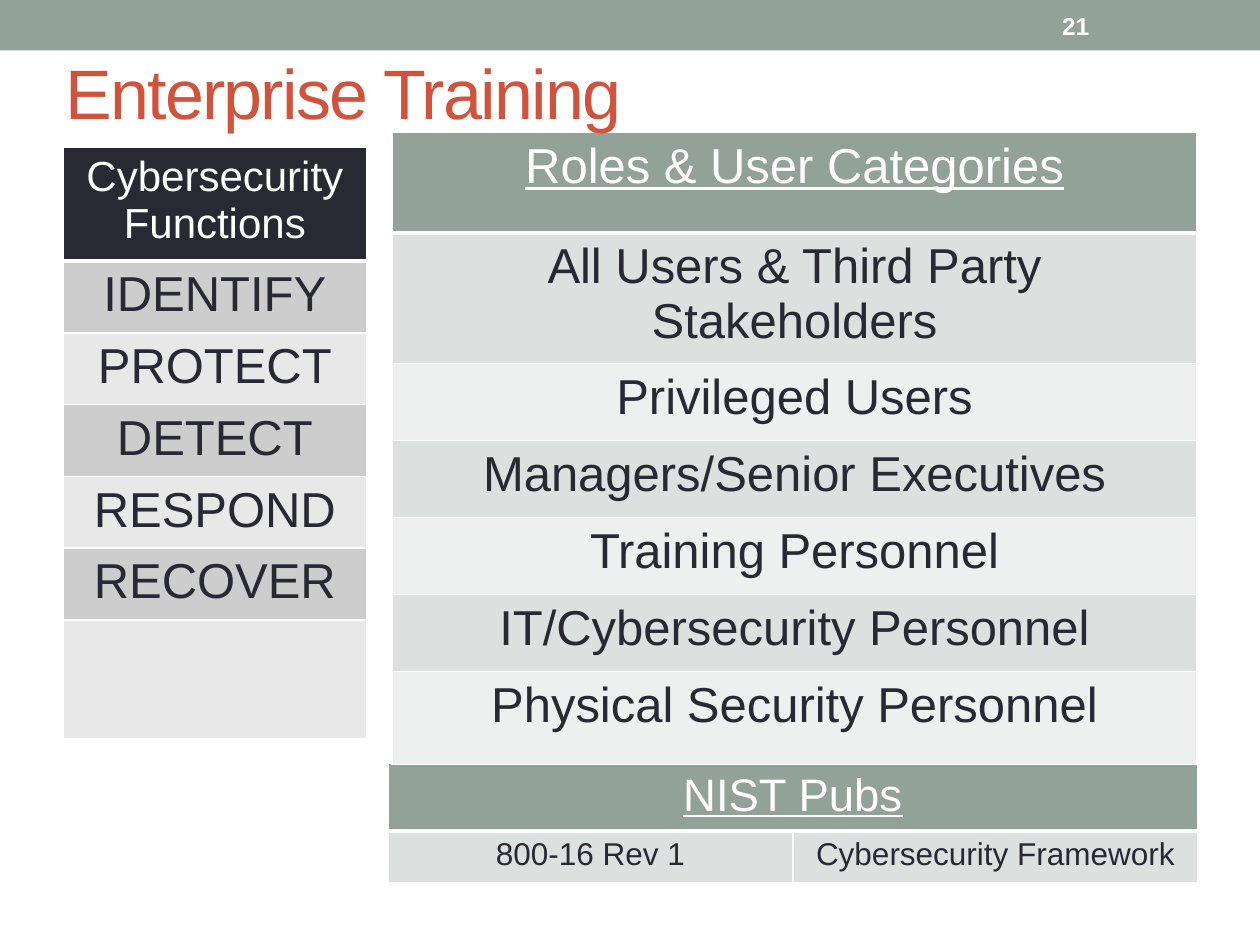
from dataclasses import dataclass

from lxml.etree import SubElement
from pptx import Presentation
from pptx.dml.color import RGBColor
from pptx.enum.shapes import MSO_SHAPE as Shape
from pptx.enum.text import MSO_ANCHOR as Anchor, PP_ALIGN as Align
from pptx.oxml.ns import qn
from pptx.util import Cm, Pt


@dataclass(frozen=True)
class Theme:
    font: str = "Arial"
    sage: str = "93A299"
    sage_bands: tuple = ("DCE0DE", "EEF0EF")
    ink: str = "292934"
    ink_bands: tuple = ("CDCDCE", "E8E8E8")
    accent: str = "D2533C"
    white: str = "FFFFFF"
    title: int = 40
    body: int = 28
    nist_header: int = 26
    functions_header: int = 24
    small: int = 18
    page: int = 14


THEME = Theme()


def write(frame, text, size, color, align=Align.LEFT, **extra):
    paragraph = frame.paragraphs[0]
    paragraph.alignment = align
    run = paragraph.add_run()
    run.text = text
    formats = {"name": THEME.font, "size": Pt(size), **extra}
    for key, value in formats.items():
        setattr(run.font, key, value)
    run.font.color.rgb = RGBColor.from_string(color)
    return run


def add_text(slide, box, text, size, color, **extra):
    frame = slide.shapes.add_textbox(*map(Cm, box)).text_frame
    frame.word_wrap = True
    frame.vertical_anchor = Anchor.MIDDLE
    return write(frame, text, size, color, **extra)


def set_borders(cell, bottom):
    """White rules on every side; they must precede the cell's fill in XML."""
    properties = cell._tc.get_or_add_tcPr()
    for side, width in (("L", 1), ("R", 1), ("T", 1), ("B", bottom)):
        line = SubElement(properties, qn(f"a:ln{side}"), w=str(Pt(width)))
        fill = SubElement(line, qn("a:solidFill"))
        SubElement(fill, qn("a:srgbClr"), val=THEME.white)


def banded_table(slide, box, heights, rows, header_fill, bands,
                 header_size, body_size, underline):
    """Header row over alternating bands; box is left, top, width."""
    left, top, width = box
    columns = max(map(len, rows))
    table = slide.shapes.add_table(
        len(rows), columns, Cm(left), Cm(top), Cm(width), Cm(sum(heights))
    ).table
    for column in table.columns:
        column.width = Cm(width / columns)
    for r, (height, texts) in enumerate(zip(heights, rows)):
        header = r == 0
        table.rows[r].height = Cm(height)
        for c in range(columns):
            cell = table.cell(r, c)
            margins = {"margin_left": 0.18, "margin_right": 0.18,
                       "margin_top": 0.13, "margin_bottom": 0.13}
            for key, value in margins.items():
                setattr(cell, key, Cm(value))
            set_borders(cell, 3 if header else 1)
            cell.fill.solid()
            fill = header_fill if header else bands[(r - 1) % 2]
            cell.fill.fore_color.rgb = RGBColor.from_string(fill)
            if c < len(texts) and texts[c]:
                write(cell.text_frame, texts[c],
                      header_size if header else body_size,
                      THEME.white if header else THEME.ink,
                      Align.CENTER, underline=header and underline)
    if len(rows[0]) < columns:
        table.cell(0, 0).merge(table.cell(0, columns - 1))


def top_bar(slide, box):
    left, top, width, height = box
    bar = slide.shapes.add_shape(Shape.RECTANGLE, *map(Cm, box))
    bar.shadow.inherit = False
    bar.fill.solid()
    bar.fill.fore_color.rgb = RGBColor.from_string(THEME.sage)
    bar.line.fill.background()
    add_text(slide, (left + 21.16, top + 0.05, 2.97, height - 0.1),
             "21", THEME.page, THEME.white, bold=True)


def title(slide, box):
    run = add_text(slide, box, "Enterprise Training", THEME.title, THEME.accent)
    run.font._element.set("spc", "-100")


def nist_pubs(slide, box):
    banded_table(slide, box, [1.25, 1.04],
                 [["NIST Pubs"], ["800-16 Rev 1", "Cybersecurity Framework"]],
                 THEME.sage, THEME.sage_bands,
                 THEME.nist_header, THEME.small, underline=True)


def roles(slide, box):
    names = ["Roles & User Categories", "All Users & Third Party Stakeholders",
             "Privileged Users", "Managers/Senior Executives",
             "Training Personnel", "IT/Cybersecurity Personnel",
             "Physical Security Personnel"]
    banded_table(slide, box, [2.03, 2.46] + [1.55] * 4 + [1.88],
                 [[name] for name in names], THEME.sage, THEME.sage_bands,
                 THEME.body, THEME.body, underline=True)


def functions(slide, box):
    names = ["Cybersecurity Functions", "IDENTIFY", "PROTECT", "DETECT",
             "RESPOND", "RECOVER", ""]
    banded_table(slide, box, [2.11] + [1.35] * 5 + [2.39],
                 [[name] for name in names], THEME.ink, THEME.ink_bands,
                 THEME.functions_header, THEME.body, underline=False)


def main():
    deck = Presentation()
    deck.slide_width, deck.slide_height = Cm(25.4), Cm(19.05)
    slide = deck.slides.add_slide(deck.slide_layouts[6])

    # Header band with page number
    top_bar(slide, (0, 0, 25.4, 1.02))
    # Right column: publications and roles
    nist_pubs(slide, (7.82, 15.39, 16.33))
    roles(slide, (7.9, 2.67, 16.23))
    # Title and left column
    title(slide, (1.07, 0.3, 23.32, 3.07))
    functions(slide, (1.27, 2.97, 6.12))

    deck.save("out.pptx")


if __name__ == "__main__":
    main()
